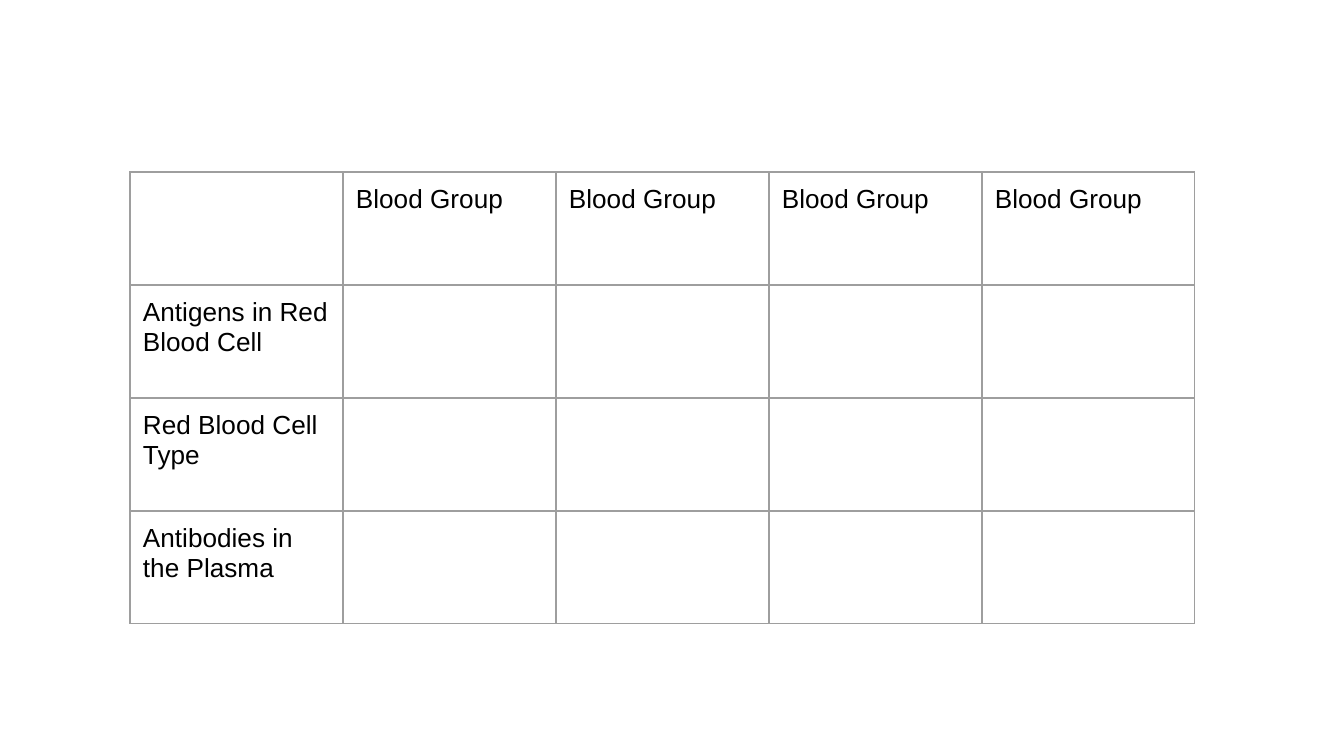
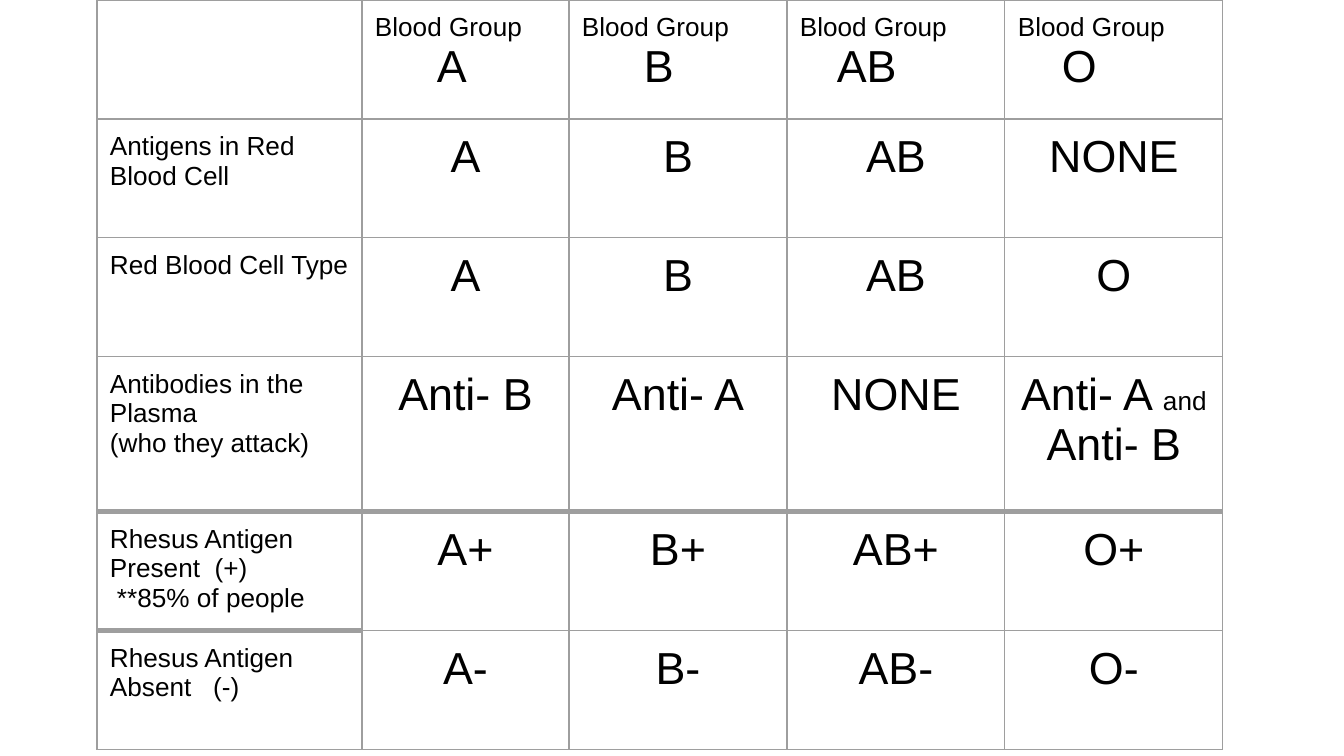
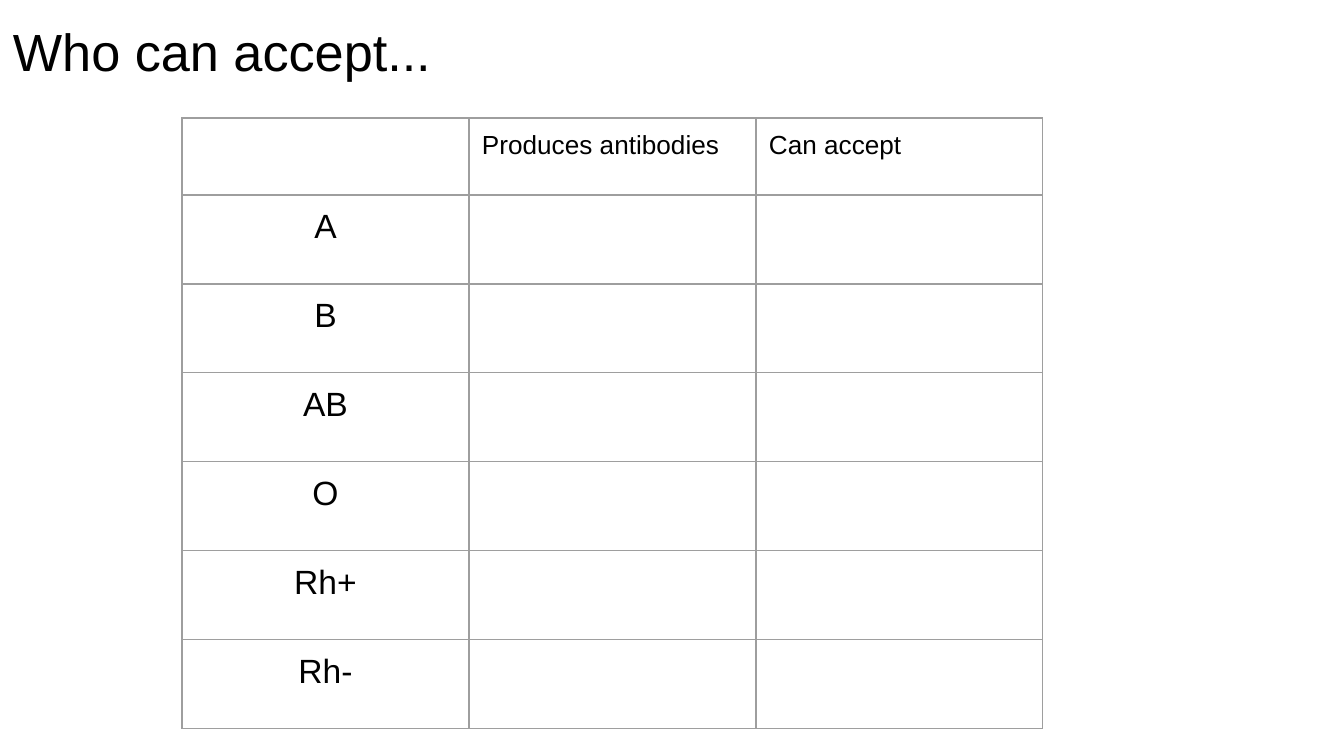
from dataclasses import dataclass

from lxml import etree
from pptx import Presentation
from pptx import util as u
from pptx.dml.color import RGBColor
from pptx.enum import text
from pptx.oxml import ns

PX = 914400 / 134.4
FONT = "Arial"
INK = "000000"
RULE = "9E9E9E"
THIN, THICK = 0.75, 3
INSET = 13
LABEL, SYMBOL, GROUP, HEADING = 14, 18, 24, 28
ALIGN = text.PP_ALIGN


@dataclass
class Line:
    """One paragraph: its (text, size) runs, alignment and left indent in px."""
    runs: list
    align: object = ALIGN.LEFT
    indent: int = 0


def px(length):
    return u.Emu(round(length * PX))


def colour(hex_string):
    return RGBColor.from_string(hex_string)


# Cell contents
def label(*lines):
    return [Line([(line, LABEL)]) for line in lines]


def centred(symbol, size=GROUP):
    return [Line([(symbol, size)], ALIGN.CENTER)]


def group_heading(group, indent):
    return label("Blood Group") + [Line([(group, GROUP)], indent=indent)]


# Text and tables
def write(frame, lines):
    frame.word_wrap = True
    for number, line in enumerate(lines):
        paragraph = frame.add_paragraph() if number else frame.paragraphs[0]
        paragraph.alignment = line.align
        if line.indent:
            paragraph._p.get_or_add_pPr().set("marL", str(px(line.indent)))
        for words, size in line.runs:
            run = paragraph.add_run()
            run.text = words
            run.font.name = FONT
            run.font.size = u.Pt(size)
            run.font.color.rgb = colour(INK)


def set_insets(holder, top=INSET):
    holder.margin_left = holder.margin_right = holder.margin_bottom = px(INSET)
    holder.margin_top = px(top)


def draw_borders(cell, top, bottom):
    widths = {"a:lnL": THIN, "a:lnR": THIN, "a:lnT": top, "a:lnB": bottom}
    properties = cell._tc.get_or_add_tcPr()
    for position, (side, width) in enumerate(widths.items()):
        border = etree.Element(ns.qn(side), w=str(u.Pt(width)))
        fill = etree.SubElement(border, ns.qn("a:solidFill"))
        etree.SubElement(fill, ns.qn("a:srgbClr"), val=RULE)
        properties.insert(position, border)


def add_grid(slide, left, top, widths, heights, contents, thick_below=()):
    """Draw a ruled table; thick_below holds (row, column) of cells with a thick lower edge."""
    grid = slide.shapes.add_table(len(heights), len(widths), px(left), px(top),
                                  px(sum(widths)), px(sum(heights))).table
    grid.first_row = grid.horz_banding = False
    for column, width in zip(grid.columns, widths):
        column.width = px(width)
    for row, height in zip(grid.rows, heights):
        row.height = px(height)
    for r, row in enumerate(contents):
        for c, lines in enumerate(row):
            cell = grid.cell(r, c)
            set_insets(cell)
            cell.fill.background()
            draw_borders(cell,
                         top=THICK if (r - 1, c) in thick_below else THIN,
                         bottom=THICK if (r, c) in thick_below else THIN)
            write(cell.text_frame, lines)


def add_title(slide, words):
    frame = slide.shapes.add_textbox(0, 0, px(1253), px(84)).text_frame
    set_insets(frame, top=19)
    write(frame, [Line([(words, HEADING)])])


# Slides
def blank_groups_slide(slide):
    traits = ["Antigens in Red Blood Cell", "Red Blood Cell Type",
              "Antibodies in the Plasma"]
    contents = [[[]] + [label("Blood Group")] * 4]
    contents += [[label(trait)] + [[]] * 4 for trait in traits]
    add_grid(slide, 130, 172, [213] * 5, [113] * 4, contents)


def filled_groups_slide(slide):
    groups = ["A", "B", "AB", "O"]
    indents = [62, 62, 37, 44]
    both_antibodies = [Line([("Anti- A ", GROUP), ("and ", LABEL)], ALIGN.CENTER),
                       *centred("Anti- B")]
    present = label("Rhesus Antigen", "Present  (+)", "**85% of people")
    present[-1].indent = 7
    contents = [
        [[]] + [group_heading(*heading) for heading in zip(groups, indents)],
        [label("Antigens in Red Blood Cell")]
        + [centred(antigen) for antigen in groups[:3] + ["NONE"]],
        [label("Red Blood Cell Type")] + [centred(group) for group in groups],
        [label("Antibodies in the Plasma", "(who they attack)")]
        + [centred(antibody) for antibody in ["Anti- B", "Anti- A", "NONE"]]
        + [both_antibodies],
        [present] + [centred(group + "+") for group in groups],
        [label("Rhesus Antigen", "Absent   (-)")]
        + [centred(group + "-") for group in groups],
    ]
    add_grid(slide, 97, 0, [265, 207] + [218] * 3, [119] * 3 + [155] + [119] * 2,
             contents, thick_below=[(3, c) for c in range(5)] + [(4, 0)])


def acceptance_slide(slide):
    add_title(slide, "Who can accept...")
    contents = [[[], label("Produces antibodies"), label("Can accept")]]
    contents += [[centred(blood, SYMBOL), [], []]
                 for blood in ["A", "B", "AB", "O", "Rh+", "Rh-"]]
    add_grid(slide, 182, 118, [287] * 3, [77] + [89] * 6, contents)


def main():
    deck = Presentation()
    deck.slide_width, deck.slide_height = px(1344), px(756)
    for build in (blank_groups_slide, filled_groups_slide, acceptance_slide):
        build(deck.slides.add_slide(deck.slide_layouts[6]))
    deck.save("out.pptx")


if __name__ == "__main__":
    main()
